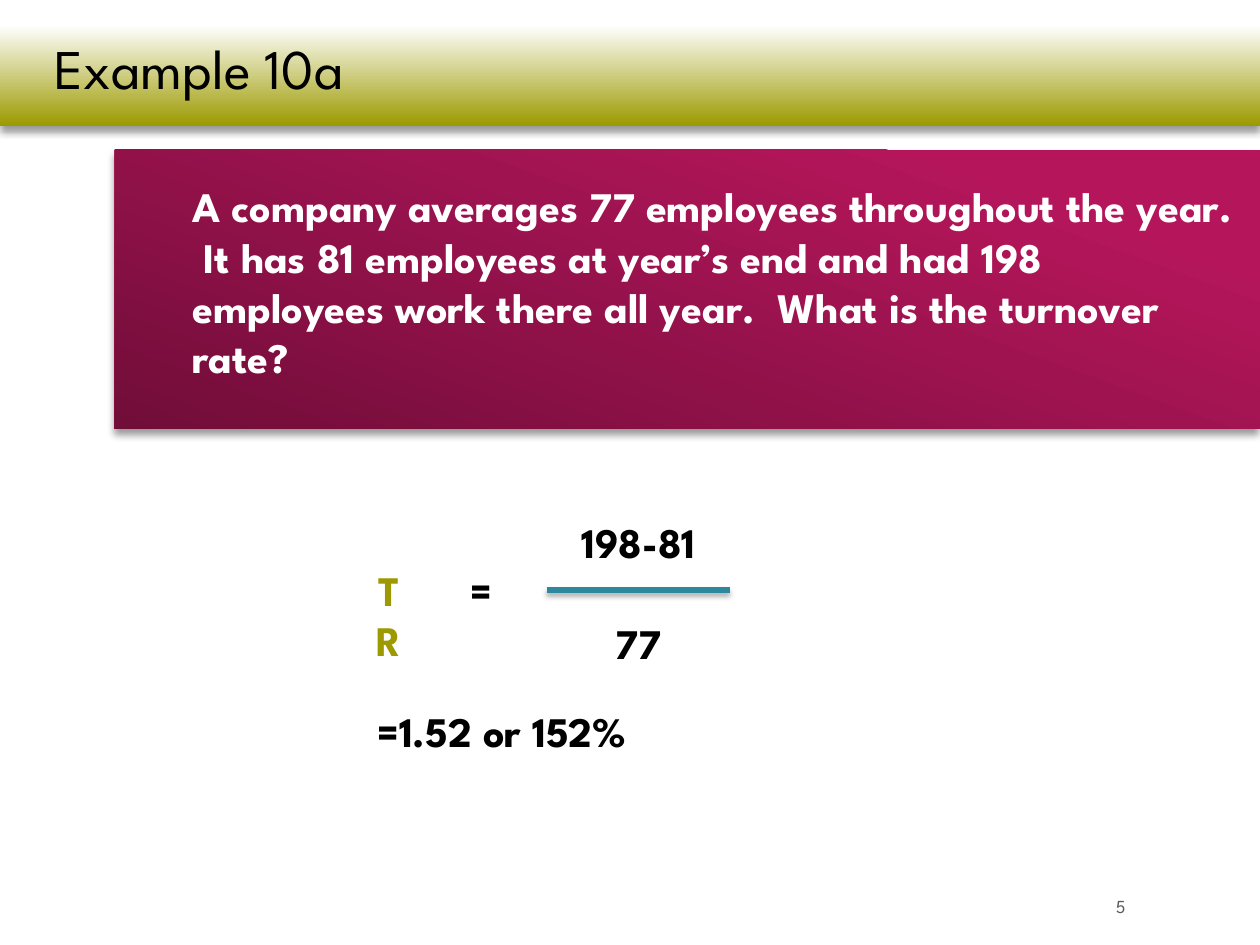
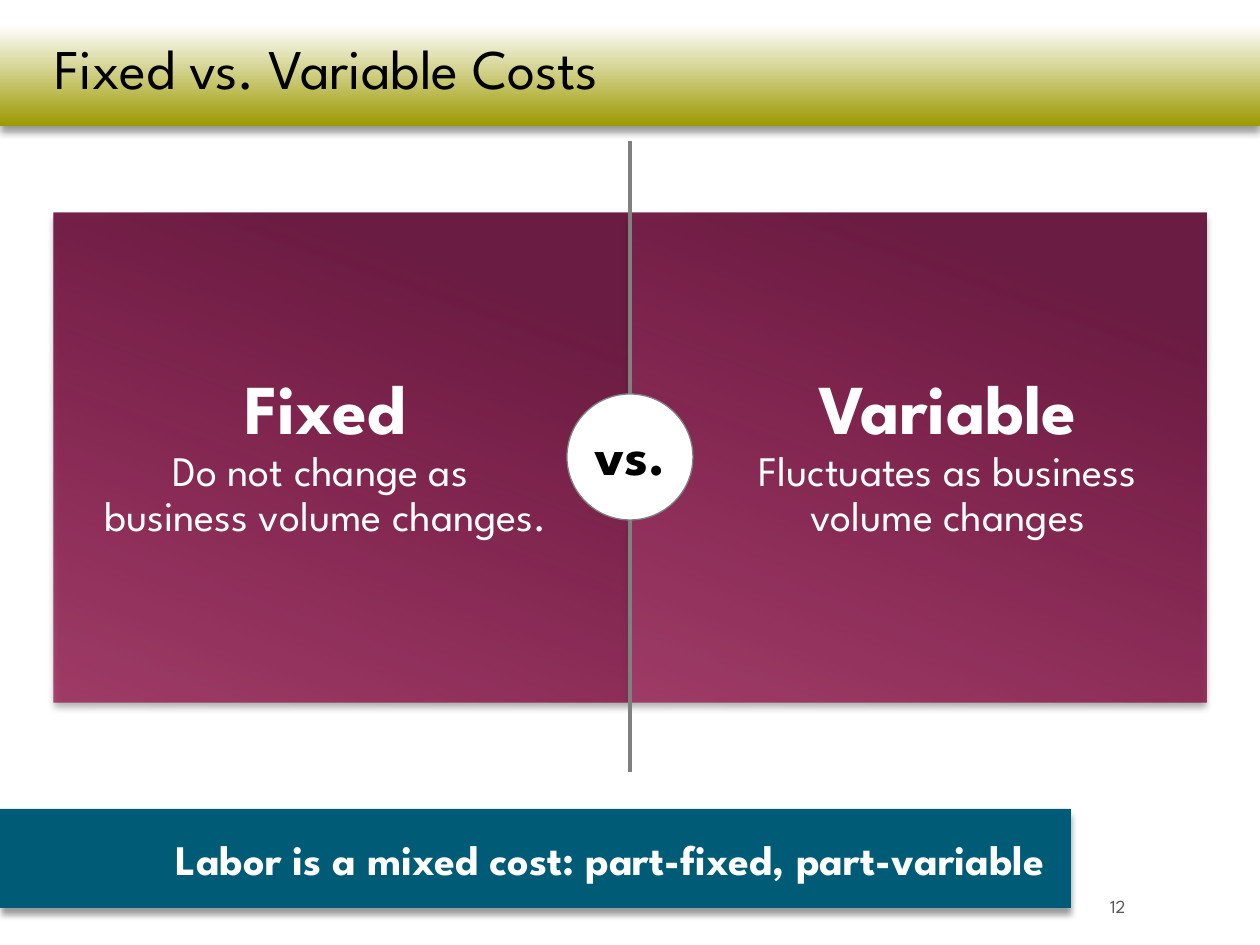
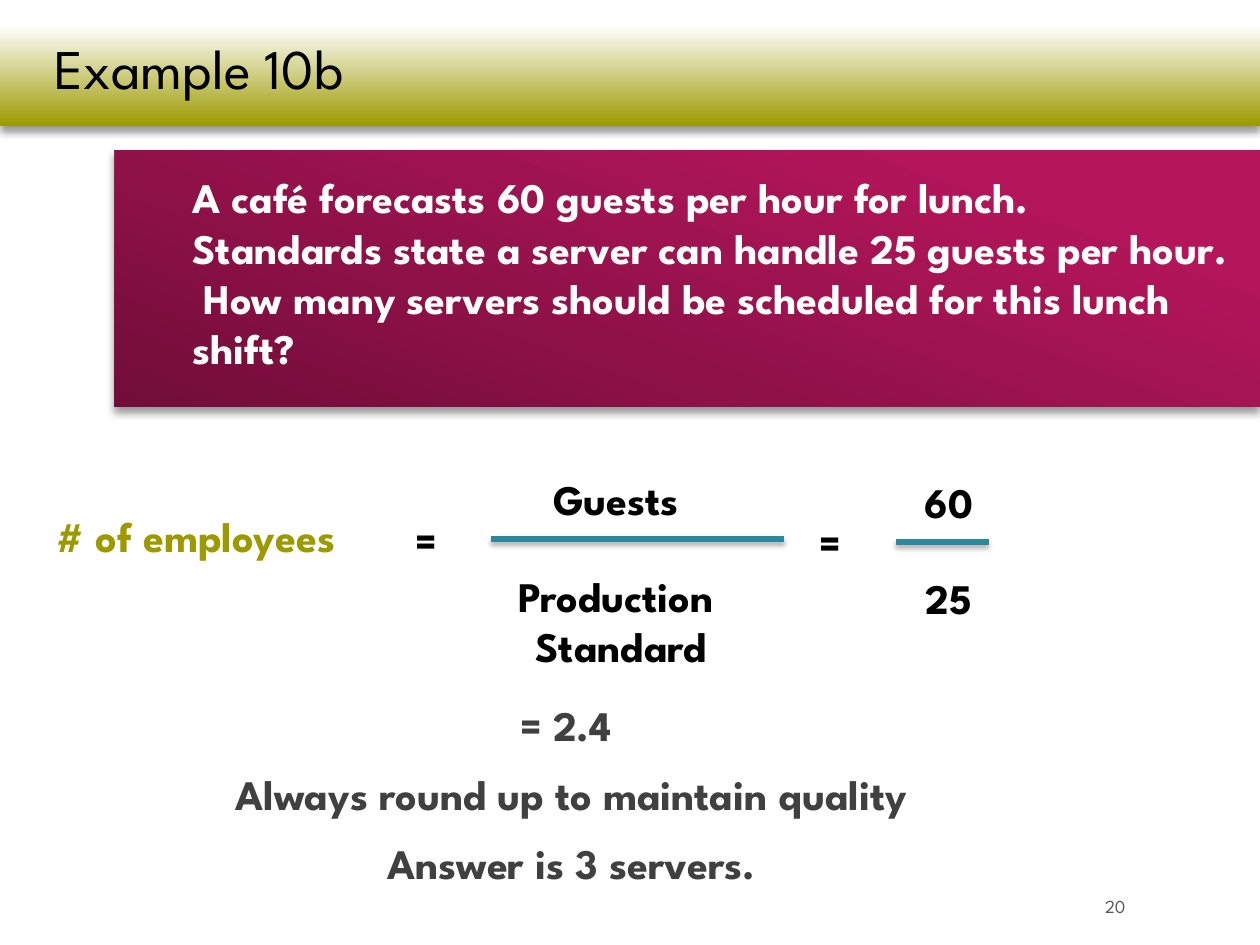
from lxml import etree
from pptx import Presentation
from pptx import util as u
from pptx.dml.color import RGBColor
from pptx.enum import shapes, text
from pptx.oxml.ns import qn

FONT = "League Spartan"
HUE = {
    "white": "FFFFFF", "black": "000000", "olive": "9C9A00",
    "pink": "B5165B", "wine": "710D39", "plum": "6B1C42", "rose": "97124C",
    "teal": "005C76", "blue": "2D879D",
    "rule": "808080", "dark": "404040", "grey": "595959",
}
ALIGN = {"l": text.PP_ALIGN.LEFT, "c": text.PP_ALIGN.CENTER, "r": text.PP_ALIGN.RIGHT}
ANCHOR = {"t": text.MSO_ANCHOR.TOP, "m": text.MSO_ANCHOR.MIDDLE}
RECT, OVAL = shapes.MSO_SHAPE.RECTANGLE, shapes.MSO_SHAPE.OVAL

# Shadow: opacity in percent, blur and distance in points
DEEP, SOFT = (40, 4, 3), (35, 3.1, 1.8)
# Gradient: first hue, its stop, last hue, angle, opacity of the last hue
BAND = ("white", 0.2, "olive", 90, 100)
ASK = ("pink", 0.17, "wine", 110, 100)
SIDE = ("plum", 0.17, "rose", 110, 73)

# Boxes are left, top, width, height in px
TITLE, NUMBER = (42, 0, 1176, 126), (989, 881, 149, 50)
ROW = 64

FIRST = {
    "title": "Example 10a", "number": "5",
    "panel": (115, 150, 1145, 279), "ask_top": 207,
    "ask": "A company averages 77 employees throughout the year.  It has 81 "
           "employees at year’s end and had 198 employees work there all year.  "
           "What is the turnover rate?",
    # text, left, top, width, hue
    "terms": [
        ("TR", 355, 558, 68, "olive"), ("=", 456, 558, 50, "black"),
        ("198-81", 547, 510, 183, "black"), ("77", 547, 611, 183, "black"),
    ],
    "bars": [(547, 730, 590)],
    "answer": ["=1.52 or 152%"],
    "place": (365, 703, 347, 100), "look": {"hue": "black"},
}
COSTS = {
    "title": "Fixed vs. Variable Costs", "number": "12",
    "sides": [
        ((84, 344, 483, 227), "Fixed", ["Do not change as ", "business volume changes."]),
        ((719, 344, 457, 227), "Variable", ["Fluctuates as business volume changes"]),
    ],
    "note": "Labor is a mixed cost: part-fixed, part-variable",
}
LAST = {
    "title": "Example 10b", "number": "20",
    "panel": (115, 150, 1145, 257), "ask_top": 198,
    "ask": "A café forecasts 60 guests per hour for lunch.  Standards state a "
           "server can handle 25 guests per hour.  How many servers should be "
           "scheduled for this lunch shift?",
    "terms": [
        ("# of employees", 24, 504, 344, "olive"), ("=", 401, 508, 50, "black"),
        ("Guests ", 452, 467, 339, "black"),
        ("Production \nStandard", 452, 564, 339, "black"),
        ("=", 805, 510, 50, "black"),
        ("60", 856, 470, 186, "black"), ("25", 856, 566, 186, "black"),
    ],
    "bars": [(491, 784, 539), (896, 989, 542)],
    "answer": ["= 2.4 ", "Always round up to maintain quality", "Answer is 3 servers."],
    "place": (0, 697, 1143, 233), "look": {"hue": "dark", "align": "c"},
}


def px(n):
    return u.Emu(round(n * 914400 / 126))


def rgb(hue):
    return RGBColor.from_string(HUE[hue])


def assign(item, values):
    for key, value in values.items():
        setattr(item, key, value)


def shade(item, shadow=None):
    """Replace the theme shadow of a shape or line with the given one, or none."""
    props = item._element.spPr
    for old in props.findall(qn("a:effectLst")):
        props.remove(old)
    effects = etree.SubElement(props, qn("a:effectLst"))
    if shadow:
        clear, blur, dist = shadow
        outer = etree.SubElement(effects, qn("a:outerShdw"), {
            "blurRad": str(u.Pt(blur)), "dist": str(u.Pt(dist)),
            "dir": "5400000", "rotWithShape": "0"})
        tone = etree.SubElement(outer, qn("a:srgbClr"), val=HUE["black"])
        etree.SubElement(tone, qn("a:alpha"), val=str(clear * 1000))


def blend(shape, grad):
    start, stop, end, angle, clear = grad
    shape.fill.gradient()
    shape.fill.gradient_angle = 360 - angle
    for point, hue, pos in zip(shape.fill.gradient_stops, (start, end), (stop, 1)):
        point.color.rgb = rgb(hue)
        point.position = pos
    if clear < 100:
        tone = shape._element.spPr.findall(".//" + qn("a:srgbClr"))[-1]
        etree.SubElement(tone, qn("a:alpha"), val=str(clear * 1000))


def block(slide, box, fill, shadow=DEEP, kind=RECT):
    """Add a borderless shape; fill is a hue name or a gradient."""
    shape = slide.shapes.add_shape(kind, *map(px, box))
    if isinstance(fill, tuple):
        blend(shape, fill)
    else:
        shape.fill.solid()
        shape.fill.fore_color.rgb = rgb(fill)
    shape.line.fill.background()
    shade(shape, shadow)
    return shape


def rule(slide, ends, hue, width, shadow=None):
    line = slide.shapes.add_connector(shapes.MSO_CONNECTOR.STRAIGHT, *map(px, ends))
    line.line.color.rgb = rgb(hue)
    line.line.width = u.Pt(width)
    shade(line, shadow)


def write(shape, lines, hue="black", size=24, bold=True, align="l", anchor="t",
          lead=None, before=0, wrap=True):
    """Fill a shape with lines, each a string or a (string, size, bold) tuple."""
    frame = shape.text_frame
    assign(frame, {"word_wrap": wrap, "auto_size": text.MSO_AUTO_SIZE.NONE,
                   "vertical_anchor": ANCHOR[anchor]})
    for i, line in enumerate(lines):
        words, pt, heavy = line if isinstance(line, tuple) else (line, size, bold)
        para = frame.add_paragraph() if i else frame.paragraphs[0]
        assign(para, {"alignment": ALIGN[align], "line_spacing": lead})
        if i and before:
            para.space_before = u.Pt(before)
        run = para.add_run()
        run.text = words
        assign(run.font, {"name": FONT, "size": u.Pt(pt), "bold": heavy})
        run.font.color.rgb = rgb(hue)


def label(slide, box, lines, **look):
    write(slide.shapes.add_textbox(*map(px, box)), lines, **look)


def start(deck, page):
    slide = deck.slides.add_slide(deck.slide_layouts[5])
    title = slide.shapes.title
    assign(title, dict(zip(("left", "top", "width", "height"), map(px, TITLE))))
    write(title, [page["title"]], size=32, bold=False, anchor="m", lead=0.8)
    assign(title.text_frame, {"margin_left": u.Inches(0.1), "margin_right": u.Inches(0.1),
                              "margin_top": u.Inches(0.22), "margin_bottom": u.Inches(0.05)})
    label(slide, NUMBER, [page["number"]], hue="grey", size=10.5, bold=False,
          align="r", anchor="m")
    return slide


def share_band(slide):
    """Draw the title band and move it to the layout, behind every slide."""
    band = block(slide, (0, 0, 1260, 126), BAND)
    slide.slide_layout.shapes._spTree.insert(2, band._element)


def example(deck, page):
    slide = start(deck, page)
    block(slide, page["panel"], ASK)
    label(slide, (180, page["ask_top"], 1066, 149), [page["ask"]], hue="white", anchor="m")
    for words, left, top, width, hue in page["terms"]:
        lines = words.split("\n")
        label(slide, (left, top, width, ROW * len(lines)), lines, hue=hue, align="c")
    for left, right, y in page["bars"]:
        rule(slide, (left, y, right, y), "blue", 3, SOFT)
    label(slide, page["place"], page["answer"], lead=0.95, before=12, **page["look"])
    return slide


def compare(deck, page):
    slide = start(deck, page)
    mid, wide = 630, 576
    for left in (mid - wide, mid):
        block(slide, (left, 213, wide, 489), SIDE)
    rule(slide, (mid, 141, mid, 772), "rule", 2)
    for box, head, body in page["sides"]:
        label(slide, box, [(head, 40, True)] + body, hue="white", bold=False,
              align="c", anchor="m", lead=0.9)
    disc = block(slide, (mid - 63, 394, 126, 126), "white", None, OVAL)
    disc.line.color.rgb = rgb("rule")
    disc.line.width = u.Pt(0.75)
    write(disc, ["vs."], size=32, align="c", anchor="m", lead=0.9, wrap=False)
    block(slide, (0, 809, 1071, 99), "teal")
    label(slide, (54, 784, 1003, 149), [page["note"]], hue="white", align="r", anchor="m")


def main():
    deck = Presentation()
    assign(deck, {"slide_width": px(1260), "slide_height": px(945)})
    share_band(example(deck, FIRST))
    compare(deck, COSTS)
    example(deck, LAST)
    deck.save("out.pptx")


if __name__ == "__main__":
    main()
